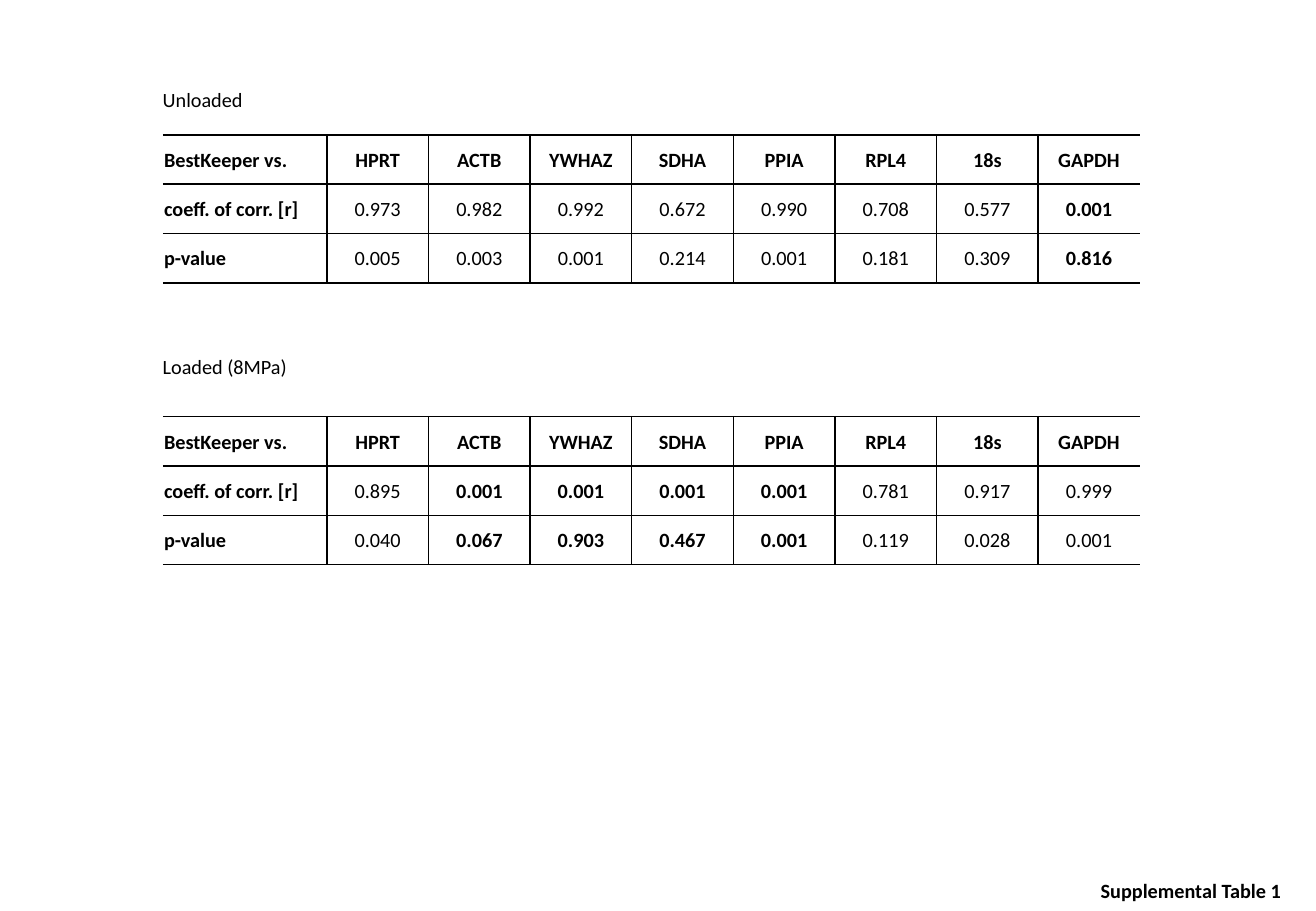
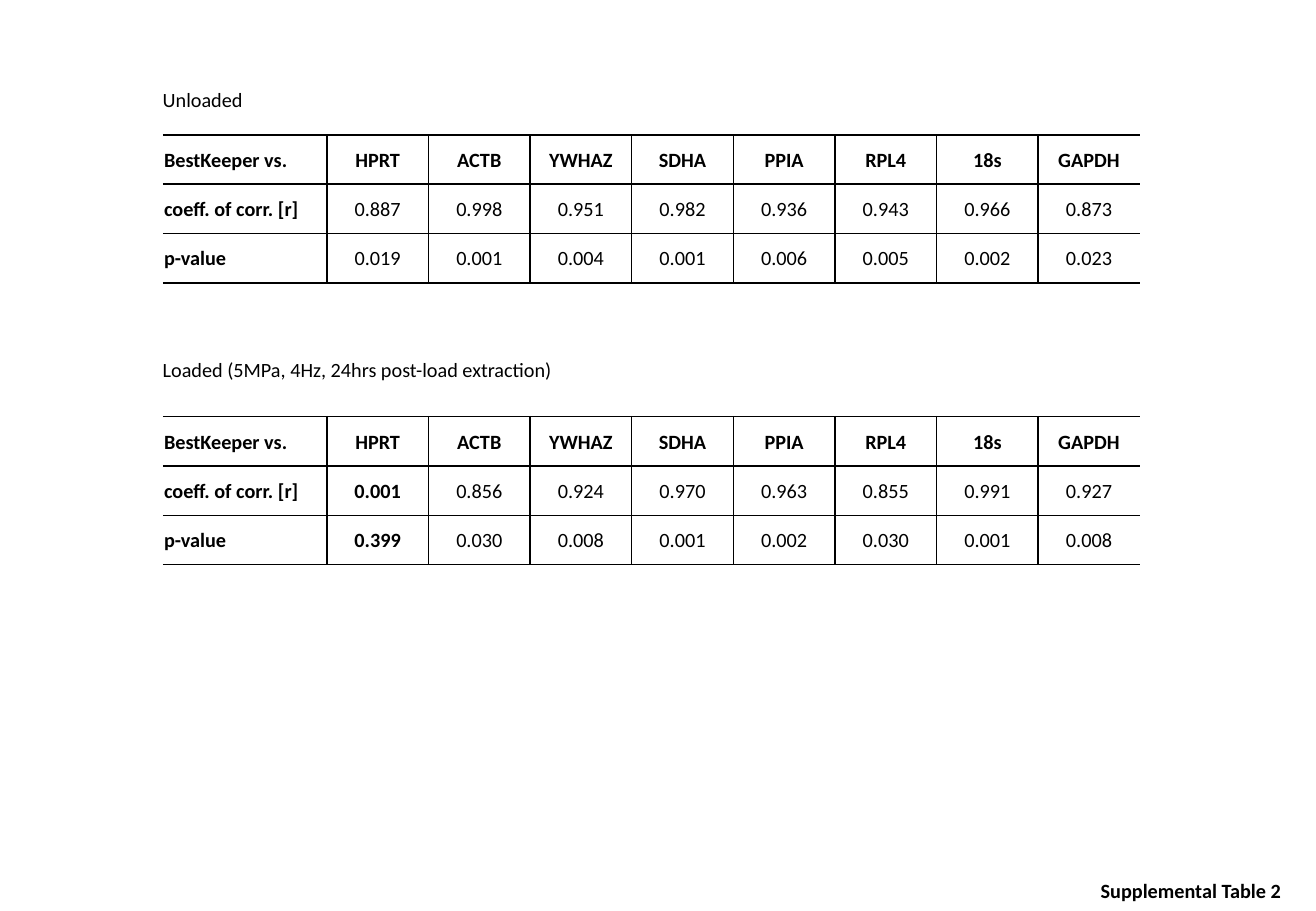
"""Build two slides of BestKeeper correlation tables."""
import pptx
import pptx.dml.color
import pptx.enum.text
import pptx.oxml.ns
import pptx.util
from lxml import etree

GENES = ["HPRT", "ACTB", "YWHAZ", "SDHA", "PPIA", "RPL4", "18s", "GAPDH"]
ROW_LABELS = ["BestKeeper vs.", "coeff. of corr. [r]", "p-value"]

SLIDES = [
    {
        "footer": "Supplemental Table 1",
        "tables": [
            {
                "caption": "Unloaded", "caption_top": 0.67, "caption_width": 1.88,
                "coefficients": "0.973 0.982 0.992 0.672 0.990 0.708 0.577 0.001",
                "p_values": "0.005 0.003 0.001 0.214 0.001 0.181 0.309 0.816",
                "bold_genes": ["GAPDH"],
            },
            {
                "caption": "Loaded (8MPa)", "caption_top": 2.87, "caption_width": 1.88,
                "coefficients": "0.895 0.001 0.001 0.001 0.001 0.781 0.917 0.999",
                "p_values": "0.040 0.067 0.903 0.467 0.001 0.119 0.028 0.001",
                "bold_genes": ["ACTB", "YWHAZ", "SDHA", "PPIA"],
            },
        ],
    },
    {
        "footer": "Supplemental Table 2",
        "tables": [
            {
                "caption": "Unloaded", "caption_top": 0.67, "caption_width": 1.88,
                "coefficients": "0.887 0.998 0.951 0.982 0.936 0.943 0.966 0.873",
                "p_values": "0.019 0.001 0.004 0.001 0.006 0.005 0.002 0.023",
                "bold_genes": [],
            },
            {
                "caption": "Loaded (5MPa, 4Hz, 24hrs post-load extraction)",
                "caption_top": 2.89, "caption_width": 3.52,
                "coefficients": "0.001 0.856 0.924 0.970 0.963 0.855 0.991 0.927",
                "p_values": "0.399 0.030 0.008 0.001 0.002 0.030 0.001 0.008",
                "bold_genes": ["HPRT"],
            },
        ],
    },
]

SLIDE_WIDTH, SLIDE_HEIGHT = 10.83, 7.5
TABLE_LEFT, TABLE_WIDTH, TABLE_HEIGHT = 1.34, 8.04, 1.22
TABLE_TOPS = [1.11, 3.43]
LABEL_WIDTH = 1.35
GENE_WIDTH = (TABLE_WIDTH - LABEL_WIDTH) / len(GENES)
CAPTION_LEFT, TEXT_HEIGHT = 1.24, 0.3
FOOTER_BOX = (8.96, 7.18, 1.83, TEXT_HEIGHT)
FONT, FONT_SIZE, INK = "Calibri", 12, "000000"
CELL_INSET, LINE_SPACING = 0.01, 1.07

inches = pptx.util.Inches


def color(value):
    return pptx.dml.color.RGBColor.from_string(value)


def format_runs(paragraph, bold):
    for run in paragraph.runs:
        run.font.name = FONT
        run.font.size = pptx.util.Pt(FONT_SIZE)
        run.font.bold = bold
        run.font.color.rgb = color(INK)


def add_text(slide, text, box, bold=False):
    frame = slide.shapes.add_textbox(*map(inches, box)).text_frame
    frame.word_wrap = True
    frame.auto_size = pptx.enum.text.MSO_AUTO_SIZE.SHAPE_TO_FIT_TEXT
    frame.text = text
    format_runs(frame.paragraphs[0], bold)


def set_borders(cell, visible_sides):
    qualified = pptx.oxml.ns.qn
    properties = cell._tc.get_or_add_tcPr()
    for side in "LRTB":
        line = etree.SubElement(properties, qualified(f"a:ln{side}"), w=str(pptx.util.Pt(1)))
        if side in visible_sides:
            fill = etree.SubElement(line, qualified("a:solidFill"))
            etree.SubElement(fill, qualified("a:srgbClr"), val=INK)
        else:
            etree.SubElement(line, qualified("a:noFill"))


def format_cell(cell, text, bold, centered, visible_sides):
    cell.margin_left = cell.margin_right = inches(CELL_INSET)
    cell.margin_top = cell.margin_bottom = inches(CELL_INSET)
    cell.vertical_anchor = pptx.enum.text.MSO_ANCHOR.MIDDLE
    set_borders(cell, visible_sides)
    cell.fill.background()
    cell.text = text
    paragraph = cell.text_frame.paragraphs[0]
    paragraph.line_spacing = LINE_SPACING
    alignment = pptx.enum.text.PP_ALIGN
    paragraph.alignment = alignment.CENTER if centered else alignment.LEFT
    format_runs(paragraph, bold)


def add_correlation_table(slide, content, top):
    body = [GENES, content["coefficients"].split(), content["p_values"].split()]
    rows = [[label, *values] for label, values in zip(ROW_LABELS, body)]
    last_column = len(GENES)
    box = (TABLE_LEFT, top, TABLE_WIDTH, TABLE_HEIGHT)
    table = slide.shapes.add_table(len(rows), last_column + 1, *map(inches, box)).table
    table.first_row = table.horz_banding = False
    for index, column in enumerate(table.columns):
        column.width = inches(GENE_WIDTH if index else LABEL_WIDTH)
    for row_index, row in enumerate(rows):
        for column_index, text in enumerate(row):
            is_label = column_index == 0
            bold = (row_index == 0 or is_label
                    or GENES[column_index - 1] in content["bold_genes"])
            sides = "TB" + ("" if is_label else "L") + ("R" if column_index < last_column else "")
            format_cell(table.cell(row_index, column_index), text, bold, not is_label, sides)


def main():
    presentation = pptx.Presentation()
    presentation.slide_width = inches(SLIDE_WIDTH)
    presentation.slide_height = inches(SLIDE_HEIGHT)
    for slide_content in SLIDES:
        slide = presentation.slides.add_slide(presentation.slide_layouts[6])
        for content, top in zip(slide_content["tables"], TABLE_TOPS):
            caption_box = (CAPTION_LEFT, content["caption_top"],
                           content["caption_width"], TEXT_HEIGHT)
            add_text(slide, content["caption"], caption_box)
            add_correlation_table(slide, content, top)
        add_text(slide, slide_content["footer"], FOOTER_BOX, bold=True)
    presentation.save("out.pptx")


if __name__ == "__main__":
    main()
